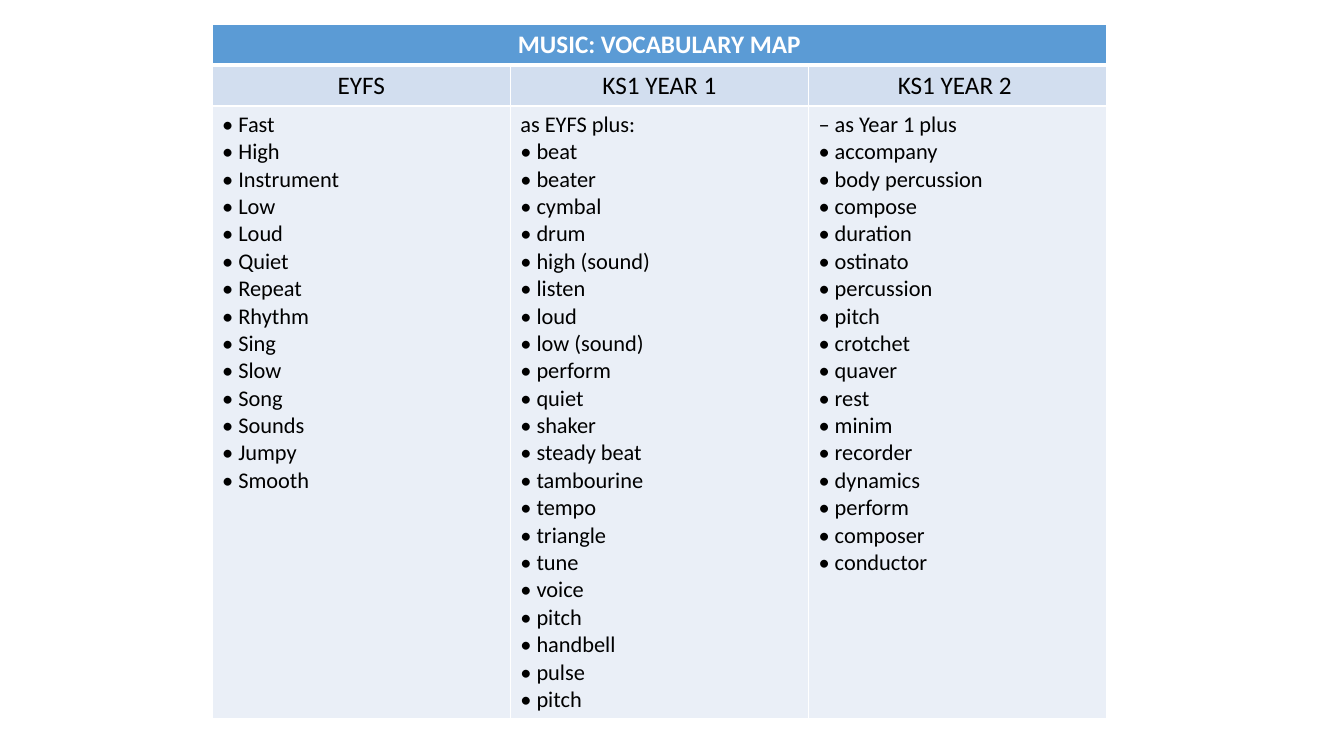
from dataclasses import dataclass

from lxml.etree import SubElement
from pptx import Presentation
from pptx.dml.color import RGBColor as RGB
from pptx.enum.text import PP_ALIGN as ALIGN
from pptx.oxml.ns import qn
from pptx.util import Pt


@dataclass(frozen=True)
class Theme:
    font: str = "Calibri"
    title_fill: str = "5B9BD5"
    heading_fill: str = "D2DEEF"
    body_fill: str = "EAEFF7"
    light: str = "FFFFFF"
    dark: str = "000000"
    heading_size: int = 18
    body_size: int = 16
    thin: int = 1
    thick: int = 3


THEME = Theme()
EMU_PER_PX = 9525
SLIDE_SIZE = (1280, 720)
TABLE_LEFT, TABLE_TOP = 202, 23
COLUMN_WIDTH = 284
ROW_HEIGHTS = (39, 39, 582)

TITLE = "MUSIC: VOCABULARY MAP"
STAGES = [
    ("EYFS", None, [
        "Fast", "High", "Instrument", "Low", "Loud", "Quiet", "Repeat",
        "Rhythm", "Sing", "Slow", "Song", "Sounds", "Jumpy", "Smooth",
    ]),
    ("KS1 YEAR 1", "as EYFS plus:", [
        "beat", "beater", "cymbal", "drum", "high (sound)", "listen", "loud",
        "low (sound)", "perform", "quiet", "shaker", "steady beat",
        "tambourine", "tempo", "triangle", "tune", "voice", "pitch",
        "handbell", "pulse", "pitch",
    ]),
    ("KS1 YEAR 2 ", "– as Year 1 plus", [
        "accompany", "body percussion", "compose", "duration", "ostinato",
        "percussion", "pitch", "crotchet", "quaver", "rest", "minim",
        "recorder", "dynamics", "perform", "composer", "conductor",
    ]),
]


def px(n):
    return n * EMU_PER_PX


def set_borders(cell, top, bottom):
    tc_pr = cell._tc.get_or_add_tcPr()
    widths = {"L": THEME.thin, "R": THEME.thin, "T": top, "B": bottom}
    for side, width in widths.items():
        line = SubElement(tc_pr, qn(f"a:ln{side}"), w=str(Pt(width)))
        fill = SubElement(line, qn("a:solidFill"))
        SubElement(fill, qn("a:srgbClr"), val=THEME.light)


def style_cell(cell, fill, top=THEME.thin, bottom=THEME.thin):
    set_borders(cell, top, bottom)
    cell.fill.solid()
    cell.fill.fore_color.rgb = RGB.from_string(fill)


def write_cell(cell, lines, size, color=THEME.dark, bold=False, align=ALIGN.LEFT):
    tf = cell.text_frame
    tf.text = "\n".join(lines)
    for p in tf.paragraphs:
        p.alignment = align
        p.font.name = THEME.font
        p.font.size = Pt(size)
        p.font.bold = bold
        p.font.color.rgb = RGB.from_string(color)


def vocabulary_lines(intro, words):
    bullets = [f"• {word}" for word in words]
    return [intro, *bullets] if intro else bullets


def add_vocabulary_table(s):
    count = len(STAGES)
    frame = s.shapes.add_table(
        len(ROW_HEIGHTS), count, px(TABLE_LEFT), px(TABLE_TOP),
        px(COLUMN_WIDTH * count), px(sum(ROW_HEIGHTS)))
    table = frame.table
    table.first_row = False
    table.horz_banding = False
    for column in table.columns:
        column.width = px(COLUMN_WIDTH)
    for row, height in zip(table.rows, ROW_HEIGHTS):
        row.height = px(height)

    for col, (stage, intro, words) in enumerate(STAGES):
        title, heading, body = (table.cell(row, col) for row in range(3))
        style_cell(title, THEME.title_fill, bottom=THEME.thick)
        style_cell(heading, THEME.heading_fill, top=THEME.thick)
        style_cell(body, THEME.body_fill)
        write_cell(heading, [stage], THEME.heading_size, align=ALIGN.CENTER)
        write_cell(body, vocabulary_lines(intro, words), THEME.body_size)

    banner = table.cell(0, 0)
    banner.merge(table.cell(0, count - 1))
    write_cell(banner, [TITLE], THEME.heading_size, THEME.light, True, ALIGN.CENTER)


def main():
    prs = Presentation()
    prs.slide_width, prs.slide_height = map(px, SLIDE_SIZE)
    s = prs.slides.add_slide(prs.slide_layouts[6])
    add_vocabulary_table(s)
    prs.save("out.pptx")


if __name__ == "__main__":
    main()
